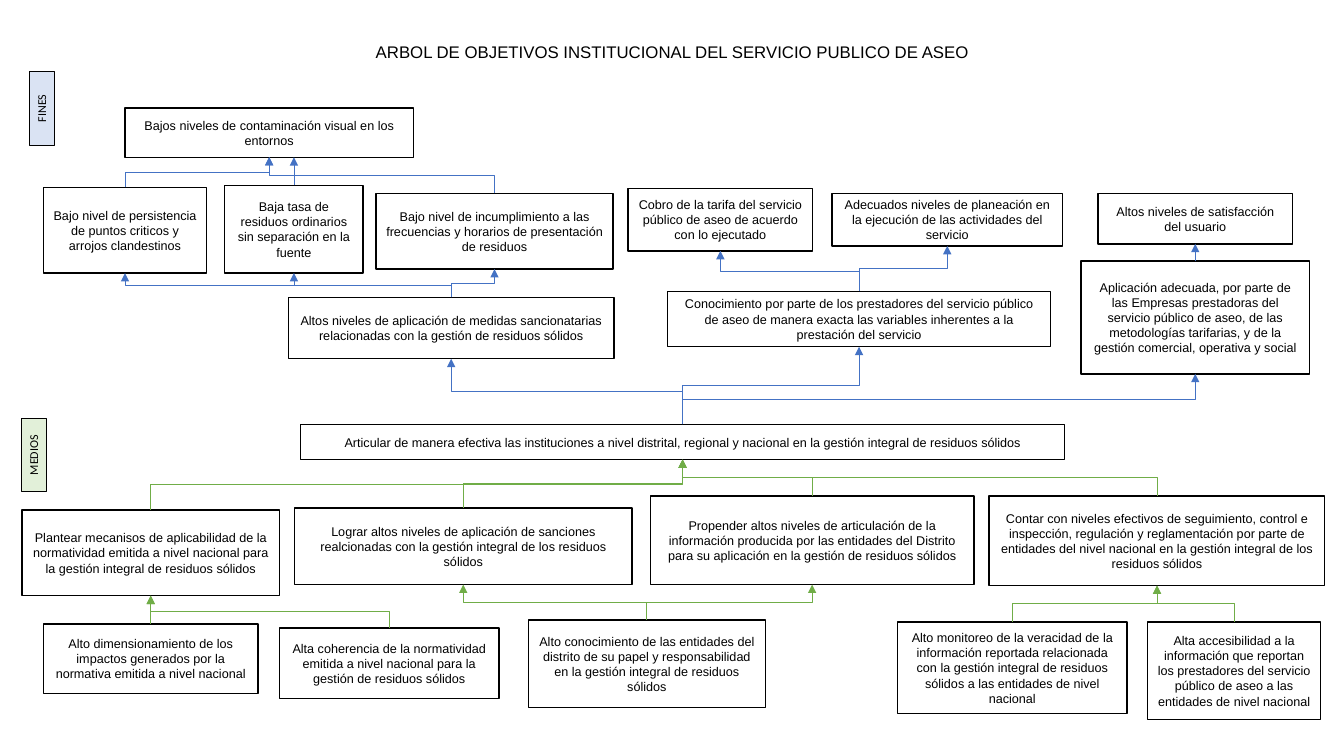
import pptx
import pptx.util
import pptx.dml.color
import pptx.enum.shapes
import pptx.enum.text
import pptx.oxml.ns
import lxml.etree

Inches = pptx.util.Inches
Pt = pptx.util.Pt
Rgb = pptx.dml.color.RGBColor.from_string
Kind = pptx.enum.shapes.MSO_CONNECTOR
Rect = pptx.enum.shapes.MSO_SHAPE.RECTANGLE
Anchor = pptx.enum.text.MSO_ANCHOR
qn = pptx.oxml.ns.qn


class Theme:
    ink = "000000"
    paper = "FFFFFF"
    ends = "4472C4"
    means = "70AD47"
    blue = "DAE3F3"
    green = "E2F0D9"
    font = "Arial"
    side = "Calibri"
    head = 12
    body = 9
    tag = 8.6
    edge = 1
    thin = 0.75
    wire = 0.5


def write(text, shape, size=Theme.body, font=Theme.font, anchor=Anchor.MIDDLE, space=None,
          fill=None, edge=Theme.edge):
    if fill:
        shape.shadow.inherit = False
        shape.fill.solid()
        shape.fill.fore_color.rgb = Rgb(fill)
        shape.line.color.rgb = Rgb(Theme.ink)
        shape.line.width = Pt(edge)
    frame = shape.text_frame
    frame.word_wrap = True
    frame.vertical_anchor = anchor
    para = frame.paragraphs[0]
    para.alignment = pptx.enum.text.PP_ALIGN.CENTER
    para.line_spacing = space
    run = para.add_run()
    run.text = text
    run.font.size = Pt(size)
    run.font.name = font
    run.font.color.rgb = Rgb(Theme.ink)


def join(low, high, color, x=None):
    x1 = low.left + low.width // 2
    x2 = x or high.left + high.width // 2
    y1, y2 = low.top, high.top + high.height
    wide, tall = abs(x2 - x1), y1 - y2
    bent = wide > Inches(0.02)
    line = slide.shapes.add_connector(Kind.ELBOW if bent else Kind.STRAIGHT, x1, y1, x2, y2)
    line.begin_connect(low, 0)
    if not x:
        line.end_connect(high, 2)
    if bent:
        line.left, line.top = (x1 + x2 - tall) // 2, (y1 + y2 - wide) // 2
        line.width, line.height = tall, wide
        right = x2 > x1
        form = line._element.spPr.find(qn("a:xfrm"))
        form.set("rot", "5400000" if right else "16200000")
        form.set("flipH", "1" if right else "0")
        form.set("flipV", "1")
    line.line.color.rgb = Rgb(color)
    line.line.width = Pt(Theme.wire)
    tip = lxml.etree.SubElement(line.line._get_or_add_ln(), qn("a:tailEnd"))
    tip.set("type", "triangle")
    lxml.etree.SubElement(line._element.spPr, qn("a:effectLst"))


deck = pptx.Presentation()
deck.slide_width, deck.slide_height = Inches(13.33), Inches(7.5)
slide = deck.slides.add_slide(deck.slide_layouts[5])

title = slide.shapes.title
title.left, title.top, title.width, title.height = map(Inches, (0.92, 0.4, 11.5, 0.25))
write("ARBOL DE OBJETIVOS INSTITUCIONAL DEL SERVICIO PUBLICO DE ASEO", title,
      size=Theme.head, space=0.9)

goals = {
    "core": (2.98, 4.21, 7.58, 0.35, "Articular de manera efectiva las instituciones a nivel distrital, regional y nacional en la gestión integral de residuos sólidos"),
    "fines": (2.92, 5.04, 3.35, 0.76, "Lograr altos niveles de aplicación de sanciones realcionadas con la gestión integral de los residuos sólidos"),
    "data": (6.45, 4.92, 3.21, 0.88, "Propender altos niveles de articulación de la información producida por las entidades del Distrito para su aplicación en la gestión de residuos sólidos"),
    "control": (9.81, 4.92, 3.33, 0.89, "Contar con niveles efectivos de seguimiento, control e inspección, regulación y reglamentación por parte de entidades del nivel nacional en la gestión integral de los residuos sólidos"),
    "action": (2.86, 2.95, 3.23, 0.61, "Altos niveles de aplicación de medidas sancionatarias relacionadas con la gestión de residuos sólidos"),
    "visual": (1.24, 1.07, 2.86, 0.49, "Bajos niveles de contaminación visual en los entornos"),
    "know": (6.62, 2.89, 3.8, 0.55, "Conocimiento por parte de los prestadores del servicio público de aseo de manera exacta las variables inherentes a la prestación del servicio"),
    "fee": (6.23, 1.87, 1.83, 0.62, "Cobro de la tarifa del servicio público de aseo de acuerdo con lo ejecutado"),
    "plan": (8.25, 1.92, 2.29, 0.52, "Adecuados niveles de planeación en la ejecución de las actividades del servicio"),
    "method": (10.72, 2.59, 2.27, 1.12, "Aplicación adecuada, por parte de las Empresas prestadoras del servicio público de aseo, de las metodologías tarifarias, y de la gestión comercial, operativa y social"),
    "user": (10.89, 1.92, 1.93, 0.5, "Altos niveles de satisfacción del usuario"),
    "norm": (0.22, 5.06, 2.55, 0.85, "Plantear mecanisos de aplicabilidad de la normatividad emitida a nivel nacional para la gestión integral de residuos sólidos"),
    "impact": (0.43, 6.19, 2.13, 0.69, "Alto dimensionamiento de los impactos generados por la normativa emitida a nivel nacional"),
    "match": (2.77, 6.23, 2.18, 0.7, "Alta coherencia de la normatividad emitida a nivel nacional para la gestión de residuos sólidos"),
    "role": (5.24, 6.15, 2.35, 0.87, "Alto conocimiento de las entidades del distrito de su papel y responsabilidad en la gestión integral de residuos sólidos"),
    "truth": (8.9, 6.17, 2.28, 0.91, "Alto monitoreo de la veracidad de la información reportada relacionada con la gestión integral de residuos sólidos a las entidades de nivel nacional"),
    "access": (11.38, 6.17, 1.72, 0.97, "Alta accesibilidad a la información que reportan los prestadores del servicio público de aseo a las entidades de nivel nacional"),
    "spots": (0.43, 1.86, 1.62, 0.85, "Bajo nivel de persistencia de puntos criticos y arrojos clandestinos"),
    "sort": (2.23, 1.84, 1.37, 0.87, "Baja tasa de residuos ordinarios sin separación en la fuente"),
    "hours": (3.73, 1.92, 2.35, 0.75, "Bajo nivel de incumplimiento a las frecuencias y horarios de presentación de residuos"),
}
boxes = {}
for name, (*place, text) in goals.items():
    boxes[name] = slide.shapes.add_shape(Rect, *map(Inches, place))
    write(text, boxes[name], fill=Theme.paper)

for text, left, top, fill in (("MEDIOS", -0.03, 4.39, Theme.green), ("FINES", 0.05, 0.95, Theme.blue)):
    label = slide.shapes.add_shape(Rect, Inches(left), Inches(top), Inches(0.73), Inches(0.25))
    label.rotation = 270
    write(text, label, size=Theme.tag, font=Theme.side, anchor=Anchor.TOP, fill=fill, edge=Theme.thin)

links = (
    (Theme.means, "norm core, fines core, data core, control core, impact norm, match norm, "
                  "role fines, role data, truth control, access control"),
    (Theme.ends, "core action, core know, core method, action spots, action sort, action hours, "
                 "know fee, know plan, method user, spots visual, hours visual"),
)
for color, pairs in links:
    for pair in pairs.split(", "):
        low, high = pair.split()
        join(boxes[low], boxes[high], color)
sort = boxes["sort"]
join(sort, boxes["visual"], Theme.ends, x=sort.left + sort.width // 2)

deck.save("out.pptx")
